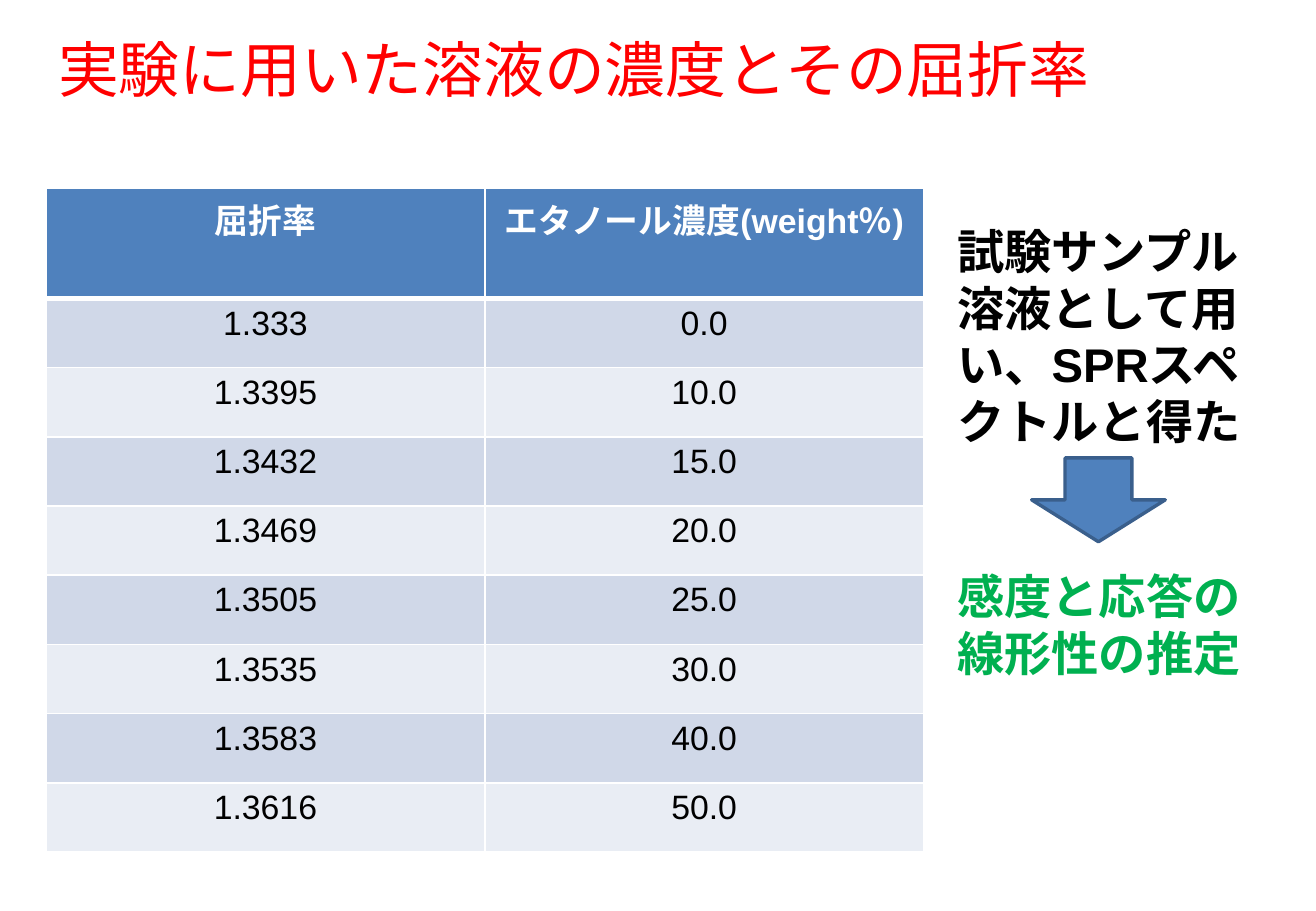
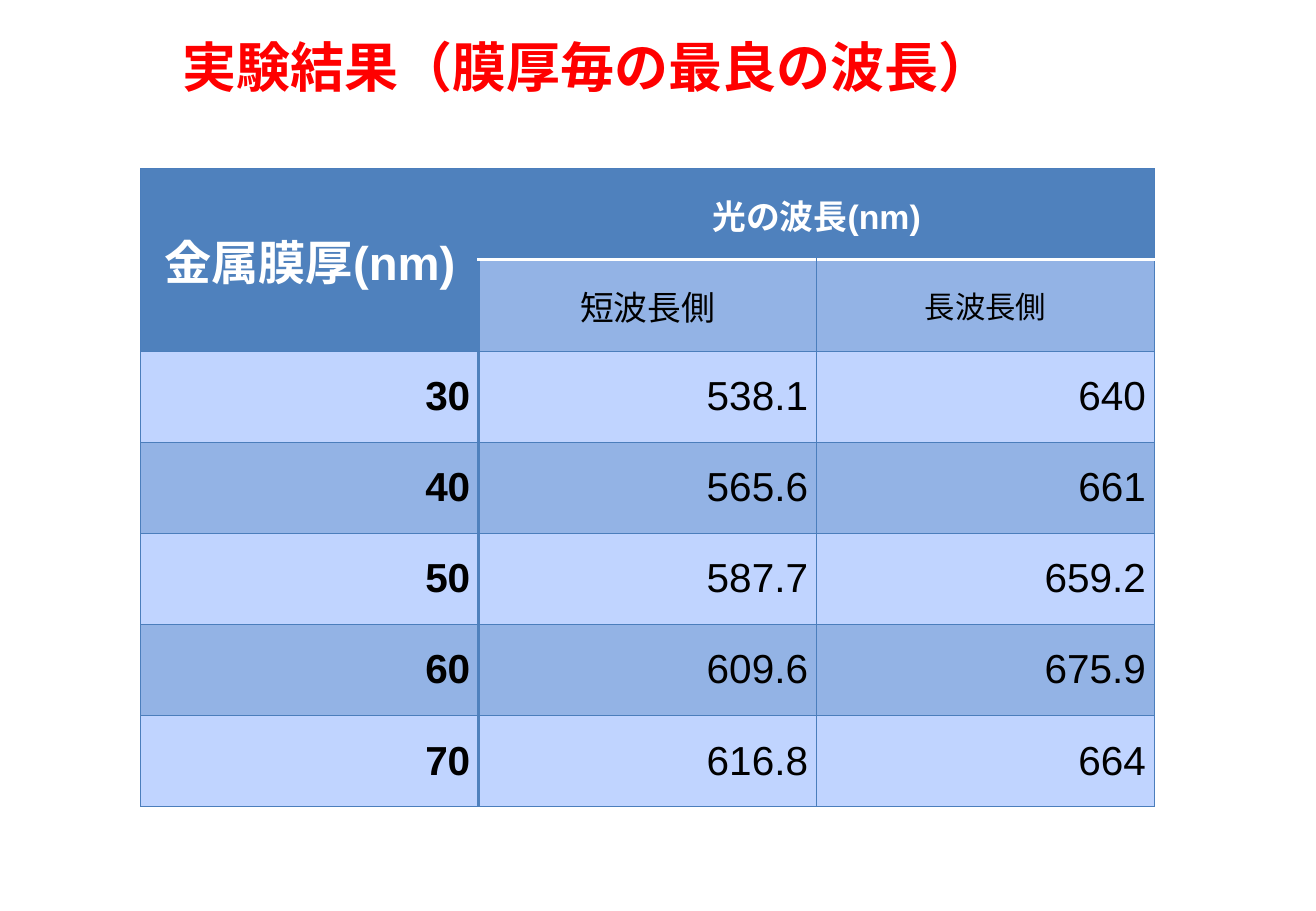
from lxml.etree import SubElement
from pptx import Presentation
from pptx.dml.color import RGBColor
from pptx.enum.lang import MSO_LANGUAGE_ID
from pptx.enum.shapes import MSO_SHAPE
from pptx.enum.text import MSO_ANCHOR, MSO_AUTO_SIZE, PP_ALIGN
from pptx.oxml.ns import qn
from pptx.util import Inches, Pt

FONT = "Arial"
COLORS = {
    "title": "FF0000",
    "text": "000000",
    "white": "FFFFFF",
    "conclusion": "00B050",
    "accent": "4F81BD",
    "outline": "3A5F8C",
    "grid": "4B7EBC",
    "gray_dark": "D0D8E8",
    "gray_light": "E9EDF4",
    "blue_dark": "93B3E5",
    "blue_light": "C0D4FF",
}


def rgb(name):
    return RGBColor.from_string(COLORS[name])


class Deck:
    """Holds the shared style and the current slide."""

    def __init__(self, width, height):
        self.presentation = Presentation()
        self.presentation.slide_width = Inches(width)
        self.presentation.slide_height = Inches(height)
        self.slide = None

    def new_slide(self):
        self.slide = self.presentation.slides.add_slide(self.presentation.slide_layouts[6])

    def set_text(self, text_frame, text, size, color, bold=False, align=PP_ALIGN.LEFT):
        paragraph = text_frame.paragraphs[0]
        paragraph.text = text
        paragraph.alignment = align
        font = paragraph.font
        font.name, font.size, font.bold = FONT, Pt(size), bold
        font.color.rgb = rgb(color)
        font.language_id = MSO_LANGUAGE_ID.JAPANESE

    def text(self, left, top, width, height, text, size=28, color="text", bold=True):
        shape = self.slide.shapes.add_textbox(*map(Inches, (left, top, width, height)))
        shape.text_frame.word_wrap = True
        shape.text_frame.auto_size = MSO_AUTO_SIZE.SHAPE_TO_FIT_TEXT
        self.set_text(shape.text_frame, text, size, color, bold)

    def title(self, left, top, width, height, text, size, bold):
        self.text(left, top, width, height, text, size, "title", bold)

    def down_arrow(self, left, top, width, height):
        shape = self.slide.shapes.add_shape(
            MSO_SHAPE.DOWN_ARROW, *map(Inches, (left, top, width, height)))
        shape.shadow.inherit = False
        shape.fill.solid()
        shape.fill.fore_color.rgb = rgb("accent")
        shape.line.color.rgb = rgb("outline")
        shape.line.width = Pt(2)

    def table(self, left, top, column_width, row_height, rows, columns):
        frame = self.slide.shapes.add_table(
            rows, columns, Inches(left), Inches(top),
            Inches(column_width * columns), Inches(row_height * rows))
        table = frame.table
        table.first_row = table.horz_banding = False
        for column in table.columns:
            column.width = Inches(column_width)
        for row in table.rows:
            row.height = Inches(row_height)
        return table

    def cell(self, cell, fill, grid, edges):
        """Draw the borders, then the fill; edges overrides grid for L, R, T or B."""
        properties = cell._tc.get_or_add_tcPr()
        for side in "LRTB":
            color, width = edges.get(side, grid)
            line = SubElement(properties, qn(f"a:ln{side}"), w=str(Pt(width)))
            solid = SubElement(line, qn("a:solidFill"))
            SubElement(solid, qn("a:srgbClr"), val=COLORS[color])
        cell.fill.solid()
        cell.fill.fore_color.rgb = rgb(fill)


def solution_slide(deck):
    deck.new_slide()

    # Table of refractive index and concentration
    rows = [
        ("屈折率", "エタノール濃度(weight％)"),
        ("1.333", "0.0"),
        ("1.3395", "10.0"),
        ("1.3432", "15.0"),
        ("1.3469", "20.0"),
        ("1.3505", "25.0"),
        ("1.3535", "30.0"),
        ("1.3583", "40.0"),
        ("1.3616", "50.0"),
    ]
    table = deck.table(0.38, 1.55, 3.61, 0.57, len(rows), 2)
    header_rule = ("white", 3)
    for r, values in enumerate(rows):
        header = r == 0
        fill = "accent" if header else "gray_dark" if r % 2 else "gray_light"
        edges = {0: {"B": header_rule}, 1: {"T": header_rule}}.get(r, {})
        for c, value in enumerate(values):
            cell = table.cell(r, c)
            deck.cell(cell, fill, ("white", 1), edges)
            deck.set_text(cell.text_frame, value, 20, "white" if header else "text",
                          header, PP_ALIGN.CENTER)

    # Title and the reasoning beside the table
    deck.title(0.38, 0.21, 9.21, 0.71, "実験に用いた溶液の濃度とその屈折率", 36, False)
    deck.text(7.78, 1.78, 2.6, 1.99, "試験サンプル溶液として用い、SPRスペクトルと得た")
    deck.down_arrow(8.49, 3.77, 1.1, 0.69)
    deck.text(7.78, 4.62, 2.83, 1.04, "感度と応答の線形性の推定", color="conclusion")


def result_slide(deck):
    deck.new_slide()

    # Table of best wavelengths, with a two-row header
    rows = [
        ("金属膜厚(nm)", "光の波長(nm)", ""),
        ("", "短波長側", "長波長側"),
        ("30", "538.1", "640"),
        ("40", "565.6", "661"),
        ("50", "587.7", "659.2"),
        ("60", "609.6", "675.9"),
        ("70", "616.8", "664"),
    ]
    header_sizes = {(0, 0): 28, (0, 1): 20, (1, 1): 20, (1, 2): 18}
    table = deck.table(1.16, 1.39, 2.78, 0.75, len(rows), 3)
    table.cell(0, 0).merge(table.cell(1, 0))
    table.cell(0, 1).merge(table.cell(0, 2))
    for r, values in enumerate(rows):
        for c, value in enumerate(values):
            cell = table.cell(r, c)
            header = r == 0 or (r == 1 and c == 0)
            fill = "accent" if header else "blue_dark" if r % 2 else "blue_light"
            edges = {0: {"R": ("accent", 2)}, 1: {"L": ("accent", 2)}}.get(c, {})
            if c > 0 and r < 2:
                edges["T" if r else "B"] = ("white", 2)
            deck.cell(cell, fill, ("grid", 0.75), edges)
            cell.vertical_anchor = MSO_ANCHOR.MIDDLE
            cell.margin_left = cell.margin_right = Inches(0.07)
            cell.margin_top = cell.margin_bottom = 0
            if value:
                deck.set_text(cell.text_frame, value, header_sizes.get((r, c), 24),
                              "white" if header else "text", header or c == 0,
                              PP_ALIGN.CENTER if r < 2 else PP_ALIGN.RIGHT)

    deck.title(1.4, 0.23, 7.01, 0.64, "実験結果（膜厚毎の最良の波長）", 32, True)


def main():
    deck = Deck(10.83, 7.5)
    solution_slide(deck)
    result_slide(deck)
    deck.presentation.save("out.pptx")


if __name__ == "__main__":
    main()
